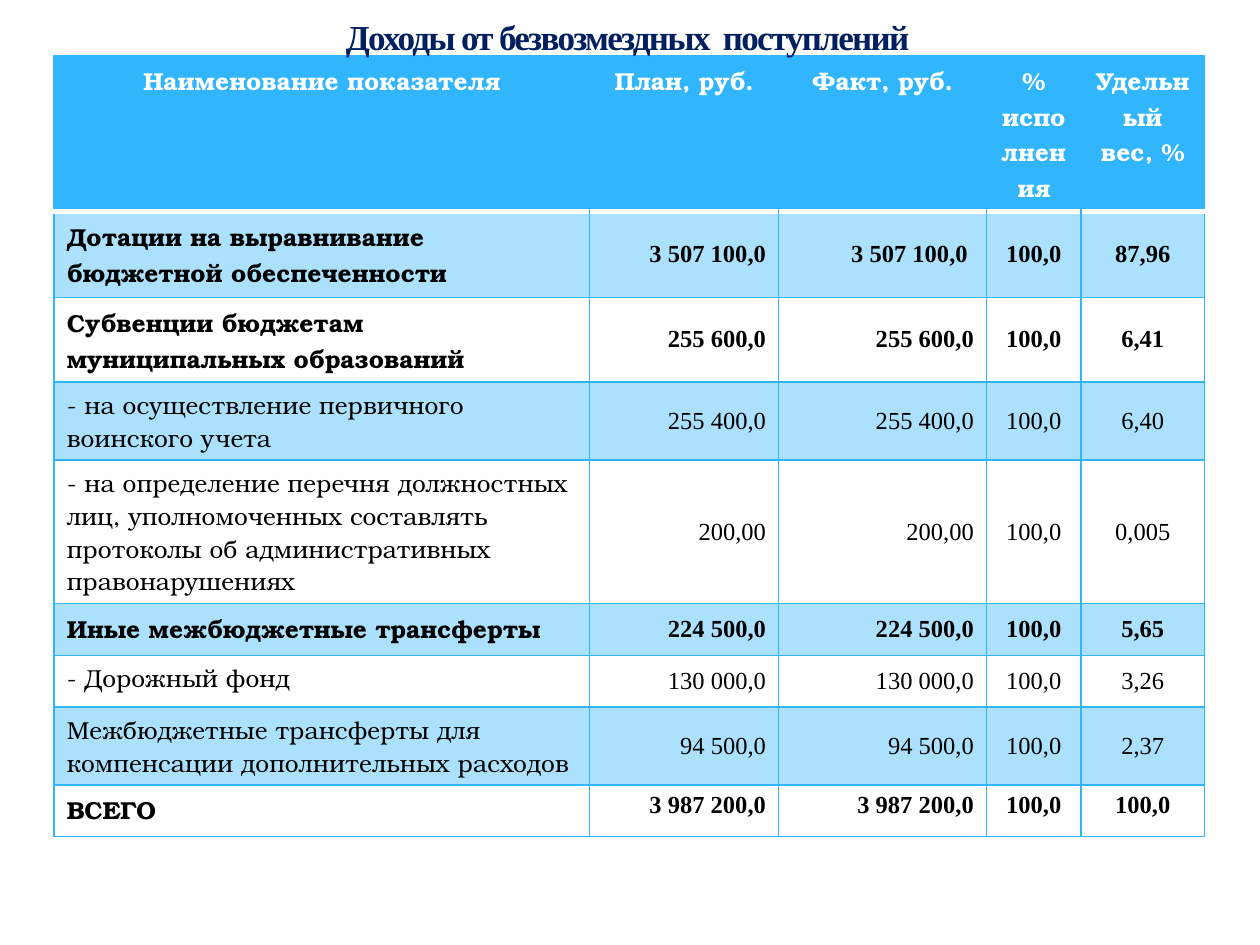
from lxml.etree import SubElement
from pptx import Presentation
from pptx.dml.color import RGBColor
from pptx.enum.text import MSO_ANCHOR, PP_ALIGN
from pptx.oxml import parse_xml
from pptx.oxml.ns import nsdecls, qn
from pptx.util import Inches, Pt

COLORS = {"title": "002060", "accent": "31B6FD", "white": "FFFFFF", "text": "000000"}
LABEL_FONT, NUMBER_FONT = "TeX Gyre Bonum", "Times New Roman"
NO_STYLE = "{2D5ABB26-0587-4C30-8999-92F81FD0307C}"

TITLE = "Доходы от безвозмездных  поступлений"
HEADERS = ["Наименование показателя", "План, руб.", "Факт, руб.",
           "% исполнения", "Удельный вес, %"]
# (row height, bold, cell texts)
INCOME = [
    (0.68, True, ["Дотации на выравнивание бюджетной обеспеченности",
                  "3 507 100,0", "3 507 100,0 ", "100,0", "87,96"]),
    (0.67, True, ["Субвенции бюджетам муниципальных образований",
                  "255 600,0", "255 600,0", "100,0", "6,41"]),
    (0.62, False, ["- на осуществление первичного воинского учета",
                   "255 400,0", "255 400,0", "100,0", "6,40"]),
    (1.14, False, ["- на определение перечня должностных лиц, уполномоченных составлять "
                   "протоколы об административных правонарушениях",
                   "200,00", "200,00", "100,0", "0,005"]),
    (0.41, True, ["Иные межбюджетные трансферты",
                  "224 500,0", "224 500,0", "100,0", "5,65"]),
    (0.41, False, ["- Дорожный фонд", "130 000,0", "130 000,0", "100,0", "3,26"]),
    (0.62, False, ["Межбюджетные трансферты для компенсации дополнительных расходов",
                   "94 500,0", "94 500,0", "100,0", "2,37"]),
    (0.41, True, ["ВСЕГО", "3 987 200,0", "3 987 200,0", "100,0", "100,0"]),
]
ROWS = [(1.24, True, HEADERS)] + INCOME
COLUMN_WIDTHS = [4.25, 1.5, 1.65, 0.75, 0.98]
ALIGNMENTS = [PP_ALIGN.LEFT, PP_ALIGN.RIGHT, PP_ALIGN.RIGHT, PP_ALIGN.CENTER, PP_ALIGN.CENTER]


def write(paragraph, text, color, alignment, **font_values):
    paragraph.alignment = alignment
    span = paragraph.add_run()
    span.text = text
    span.font.color.rgb = RGBColor.from_string(COLORS[color])
    for name, value in font_values.items():
        setattr(span.font, name, value)
    return span


def fill_cell(cell, opacity):
    """Fill with the accent colour; opacity in percent, 0 for no fill."""
    if not opacity:
        cell.fill.background()
        return
    cell.fill.solid()
    cell.fill.fore_color.rgb = RGBColor.from_string(COLORS["accent"])
    if opacity < 100:
        color = cell.fill._xPr.find(qn("a:solidFill"))[0]
        SubElement(color, qn("a:alpha")).set("val", str(opacity * 1000))


def set_borders(cell, borders):
    """Borders maps a side (L, R, T, B, in that order) to (colour, points)."""
    properties = cell._tc.get_or_add_tcPr()
    for index, (side, (color, points)) in enumerate(borders.items()):
        properties.insert(index, parse_xml(
            f'<a:ln{side} {nsdecls("a")} w="{Pt(points)}"><a:solidFill>'
            f'<a:srgbClr val="{COLORS[color]}"/></a:solidFill></a:ln{side}>'))


deck = Presentation()
deck.slide_width, deck.slide_height = Inches(10), Inches(7.5)
page = deck.slides.add_slide(deck.slide_layouts[5])

title = page.shapes.title
title.left, title.top, title.width, title.height = map(Inches, (1.14, 0, 7.68, 0.58))
title.text_frame.vertical_anchor = MSO_ANCHOR.MIDDLE
heading = write(title.text_frame.paragraphs[0], TITLE, "title", PP_ALIGN.CENTER,
                name=NUMBER_FONT, size=Pt(20), bold=True)
heading.font._element.set("spc", "-100")

frame = page.shapes.add_table(
    len(ROWS), len(HEADERS), Inches(0.43), Inches(0.44),
    Inches(sum(COLUMN_WIDTHS)), Inches(sum(height for height, _, _ in ROWS)))
title._element.addprevious(frame._element)  # the heading stays in front
table = frame.table
table._tbl.tblPr.find(qn("a:tableStyleId")).text = NO_STYLE
for column, width in zip(table.columns, COLUMN_WIDTHS):
    column.width = Inches(width)

line = ("accent", 1)
last_row, last_column = len(ROWS) - 1, len(HEADERS) - 1
for r, (height, bold, texts) in enumerate(ROWS):
    table.rows[r].height = Inches(height)
    is_header = r == 0
    for c, text in enumerate(texts):
        cell = table.cell(r, c)
        is_number = not is_header and c > 0
        write(cell.text_frame.paragraphs[0], text, "white" if is_header else "text",
              PP_ALIGN.CENTER if is_header else ALIGNMENTS[c],
              name=NUMBER_FONT if is_number else LABEL_FONT, size=Pt(14), bold=bold)
        centred = is_number and r < last_row
        cell.vertical_anchor = MSO_ANCHOR.MIDDLE if centred else MSO_ANCHOR.TOP
        fill_cell(cell, 100 if is_header else 40 * (r % 2))
        borders = dict(L=line, R=line, T=line, B=line)
        if is_header:
            borders["B"] = ("white", 3)
            if c > 0:
                del borders["L"]
            if c < last_column:
                del borders["R"]
        elif r == 1:
            borders["T"] = ("white", 3)
        set_borders(cell, borders)

deck.save("out.pptx")
